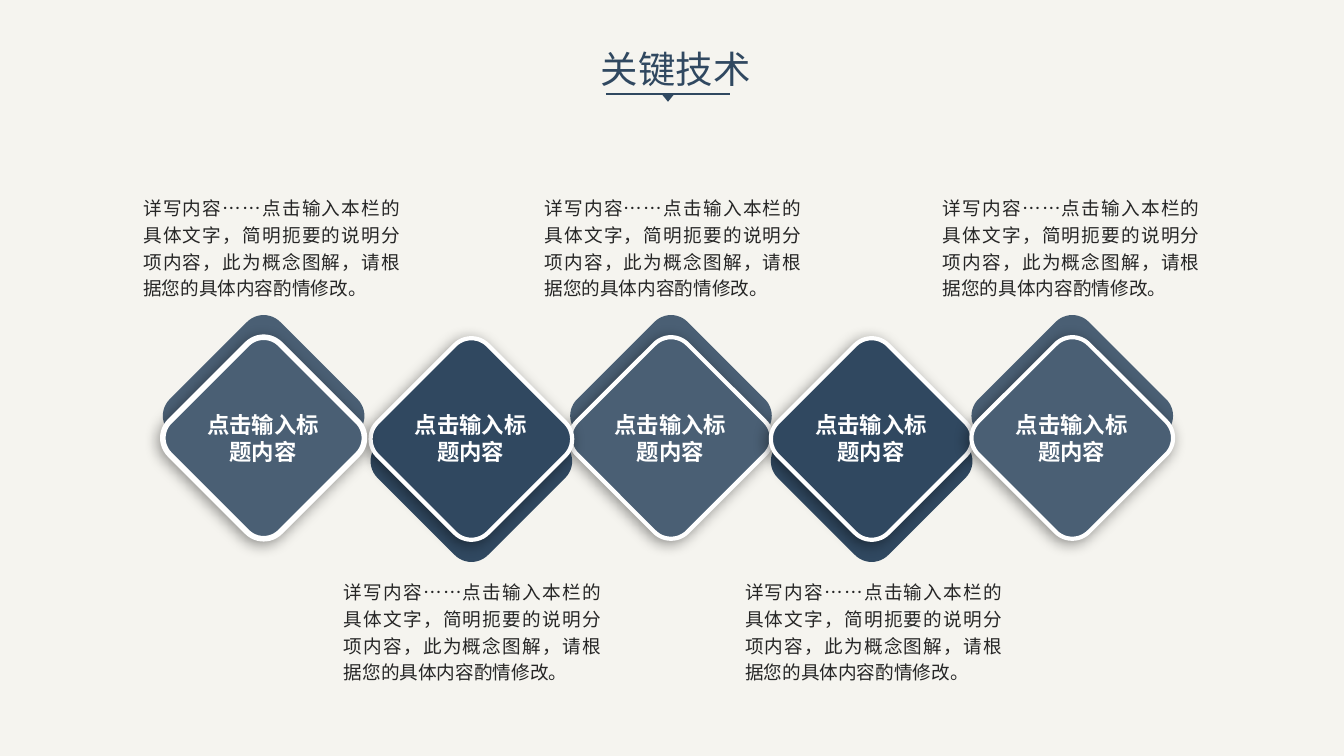
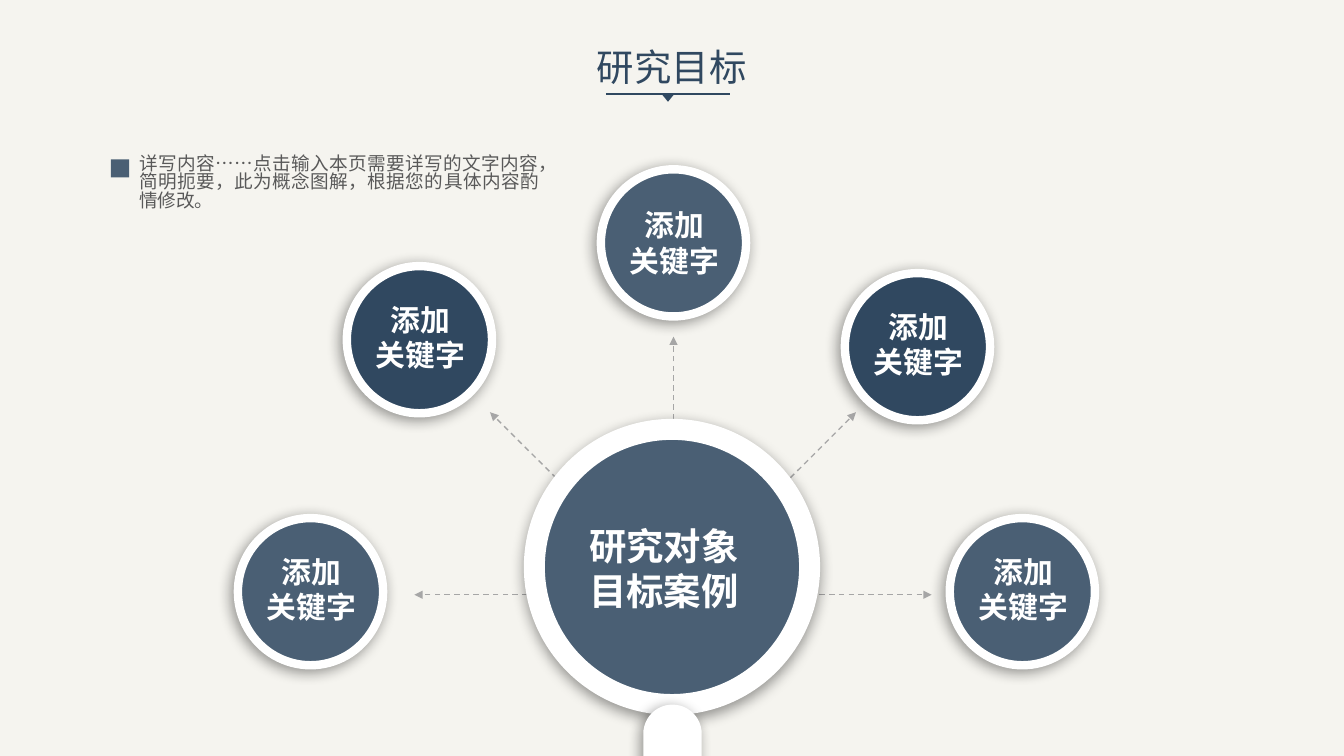
from dataclasses import dataclass

from lxml.etree import SubElement
from pptx import Presentation
from pptx.dml.color import RGBColor
from pptx.enum.dml import MSO_LINE
from pptx.enum.shapes import MSO_CONNECTOR, MSO_SHAPE as SHAPE
from pptx.enum.text import MSO_ANCHOR as ANCHOR, MSO_AUTO_SIZE as AUTO, PP_ALIGN as ALIGN
from pptx.oxml.ns import qn
from pptx.util import Inches, Length, Pt

FONT = "Noto Sans CJK SC"
NAVY = RGBColor(0x30, 0x48, 0x60)
SLATE = RGBColor(0x4A, 0x5F, 0x74)
WHITE = RGBColor(0xFF, 0xFF, 0xFF)
PAPER = RGBColor(0xF5, 0xF4, 0xEF)
INK = RGBColor(0x26, 0x26, 0x26)
GREY = RGBColor(0x59, 0x59, 0x59)
ARROW_GREY = RGBColor(0xA6, 0xA6, 0xA6)

DIAMOND_LABEL = "点击输入标题内容"
DIAMOND_BODY = "详写内容……点击输入本栏的具体文字，简明扼要的说明分项内容，此为概念图解，请根据您的具体内容酌情修改。"
GOAL_BODY = "详写内容……点击输入本页需要详写的文字内容，简明扼要，此为概念图解，根据您的具体内容酌情修改。"

DIAMOND_SIDE = 1.55
HUB_CENTER = (6.68, 5.9)


@dataclass(frozen=True)
class Style:
    size: float
    color: RGBColor
    bold: bool = False
    align: ALIGN = ALIGN.LEFT
    spacing: float | Length | None = None


@dataclass(frozen=True)
class DiamondKind:
    color: RGBColor
    rotation: int
    back_top: float
    front_top: float
    body_top: float


@dataclass(frozen=True)
class Diamond:
    left: float
    body_left: float
    kind: DiamondKind
    outline: float = 3


@dataclass(frozen=True)
class Keyword:
    left: float
    top: float
    color: RGBColor
    arrow_end: tuple[float, float]
    label_drop: float = 0.27


TITLE = Style(26.7, NAVY)
LABEL = Style(16, WHITE, True, ALIGN.CENTER)
BODY = Style(13.3, INK, align=ALIGN.JUSTIFY, spacing=1.2)
GOAL = Style(13.3, GREY, align=ALIGN.JUSTIFY, spacing=Pt(13))
KEYWORD = Style(21.3, WHITE, True, ALIGN.CENTER)
HUB = Style(26.7, WHITE, True, ALIGN.CENTER)

UP = DiamondKind(SLATE, 315, 3.35, 3.57, 1.91)
DOWN = DiamondKind(NAVY, 135, 3.8, 3.58, 5.72)

# The middle diamond lies beneath its neighbours.
DIAMONDS = [
    Diamond(5.88, 5.4, UP),
    Diamond(3.9, 3.41, DOWN),
    Diamond(1.84, 1.42, UP, outline=4),
    Diamond(7.87, 7.39, DOWN),
    Diamond(9.86, 9.35, UP),
]

KEYWORDS = [
    Keyword(2.36, 5.14, SLATE, (4.11, 5.9)),
    Keyword(3.44, 2.64, NAVY, (4.86, 4.09)),
    Keyword(5.96, 1.68, SLATE, (6.68, 3.34), label_drop=0.29),
    Keyword(8.38, 2.71, NAVY, (8.49, 4.09)),
    Keyword(9.42, 5.14, SLATE, (9.24, 5.9)),
]


def add_shadow(sp, angle: int) -> None:
    effects = sp._element.spPr.find(qn("a:effectLst"))
    shadow = SubElement(effects, qn("a:outerShdw"), blurRad=str(Pt(10)), dist=str(Pt(3)),
                        dir=str(angle * 60000), algn="ctr", rotWithShape="0")
    color = SubElement(shadow, qn("a:srgbClr"), val="000000")
    SubElement(color, qn("a:alpha"), val="40000")


def add_shape(s, kind: SHAPE, left: float, top: float, width: float, height: float,
              fill: RGBColor, outline: float = 0, rotation: int = 0,
              corner: float | None = None, shadow: int | None = None) -> None:
    """Draw a filled shape; outline is a white border in points, shadow an angle."""
    sp = s.shapes.add_shape(kind, Inches(left), Inches(top), Inches(width), Inches(height))
    sp.rotation = rotation
    sp.fill.solid()
    sp.fill.fore_color.rgb = fill
    if outline:
        sp.line.color.rgb = WHITE
        sp.line.width = Pt(outline)
    else:
        sp.line.fill.background()
    if corner is not None:
        sp.adjustments[0] = corner
    sp.shadow.inherit = False
    if shadow is not None:
        add_shadow(sp, shadow)


def add_line(s, start: tuple[float, float], end: tuple[float, float],
             color: RGBColor, width: float, arrow: bool = False) -> None:
    """Draw a plain line, or a dashed one with an arrowhead at its end."""
    line = s.shapes.add_connector(MSO_CONNECTOR.STRAIGHT, *map(Inches, start + end))
    line.line.color.rgb = color
    line.line.width = Pt(width)
    SubElement(line._element.spPr, qn("a:effectLst"))
    if arrow:
        line.line.dash_style = MSO_LINE.DASH
        SubElement(line.line._get_or_add_ln(), qn("a:tailEnd"), type="triangle")


def add_text(s, left: float, top: float, width: float, height: float, text: str, style: Style,
             insets: tuple[float, float] = (0.1, 0.05), wrap: bool = True,
             grow: bool = True, anchor: ANCHOR = ANCHOR.TOP) -> None:
    """Add a text box; each line of text becomes a paragraph."""
    box = s.shapes.add_textbox(Inches(left), Inches(top), Inches(width), Inches(height))
    tf = box.text_frame
    tf.word_wrap = wrap
    tf.auto_size = AUTO.SHAPE_TO_FIT_TEXT if grow else AUTO.NONE
    tf.vertical_anchor = anchor
    tf.margin_left = tf.margin_right = Inches(insets[0])
    tf.margin_top = tf.margin_bottom = Inches(insets[1])
    tf.text = text
    for p in tf.paragraphs:
        p.alignment = style.align
        p.line_spacing = style.spacing
        p.font.size = Pt(style.size)
        p.font.bold = style.bold
        p.font.color.rgb = style.color
        p.font.name = FONT
        SubElement(p._p.pPr.find(qn("a:defRPr")), qn("a:ea"), typeface=FONT)


def add_titled_slide(prs, title: str, left: float, top: float):
    s = prs.slides.add_slide(prs.slide_layouts[6])
    add_line(s, (6.01, 0.93), (7.24, 0.93), NAVY, 1.5)
    add_shape(s, SHAPE.ISOSCELES_TRIANGLE, 6.56, 0.93, 0.13, 0.08, NAVY, rotation=180)
    add_text(s, left, top, 1.75, 0.54, title, TITLE, wrap=False)
    return s


def add_diamond(s, d: Diamond) -> None:
    kind = d.kind
    for top, outline, shadow in ((kind.back_top, 0, None), (kind.front_top, d.outline, 135)):
        add_shape(s, SHAPE.ROUNDED_RECTANGLE, d.left, top, DIAMOND_SIDE, DIAMOND_SIDE,
                  kind.color, outline, kind.rotation, corner=0.15, shadow=shadow)
    add_text(s, d.left + 0.11, 4.2, 1.32, 0.29, DIAMOND_LABEL, LABEL,
             grow=False, anchor=ANCHOR.MIDDLE)
    add_text(s, d.body_left, kind.body_top, 2.55, 1.07, DIAMOND_BODY, BODY, insets=(0, 0))


def add_keyword(s, k: Keyword) -> None:
    add_shape(s, SHAPE.OVAL, k.left, k.top, 1.44, 1.46, k.color, outline=6, shadow=135)
    add_text(s, k.left + 0.08, k.top + k.label_drop, 1.3, 0.87, "添加\n关键字", KEYWORD,
             insets=(0.16, 0.08))


def add_hub(s) -> None:
    """Draw the magnifier in the middle of the keywords."""
    add_shape(s, SHAPE.OVAL, 5.3, 4.26, 2.73, 2.73, SLATE, outline=15, shadow=100)
    add_shape(s, SHAPE.ROUNDED_RECTANGLE, 6.38, 6.99, 0.58, 1.17, WHITE, corner=0.5, shadow=135)
    add_text(s, 5.59, 5.14, 1.99, 0.99, "研究对象目标案例", HUB)


def build_technology_slide(prs) -> None:
    s = add_titled_slide(prs, "关键技术", 5.86, 0.41)
    for d in DIAMONDS:
        add_diamond(s, d)


def build_goal_slide(prs) -> None:
    s = add_titled_slide(prs, "研究目标", 5.82, 0.39)
    for k in KEYWORDS:
        add_line(s, HUB_CENTER, k.arrow_end, ARROW_GREY, 1, arrow=True)
    add_hub(s)
    for k in KEYWORDS:
        add_keyword(s, k)
    add_text(s, 1.38, 1.55, 3.97, 0.54, GOAL_BODY, GOAL, insets=(0, 0))
    add_shape(s, SHAPE.RECTANGLE, 1.1, 1.58, 0.18, 0.18, SLATE)


def main() -> None:
    prs = Presentation()
    prs.slide_width, prs.slide_height = Inches(13.33), Inches(7.5)
    background = prs.slide_master.background.fill
    background.solid()
    background.fore_color.rgb = PAPER
    build_technology_slide(prs)
    build_goal_slide(prs)
    prs.save("out.pptx")


if __name__ == "__main__":
    main()
